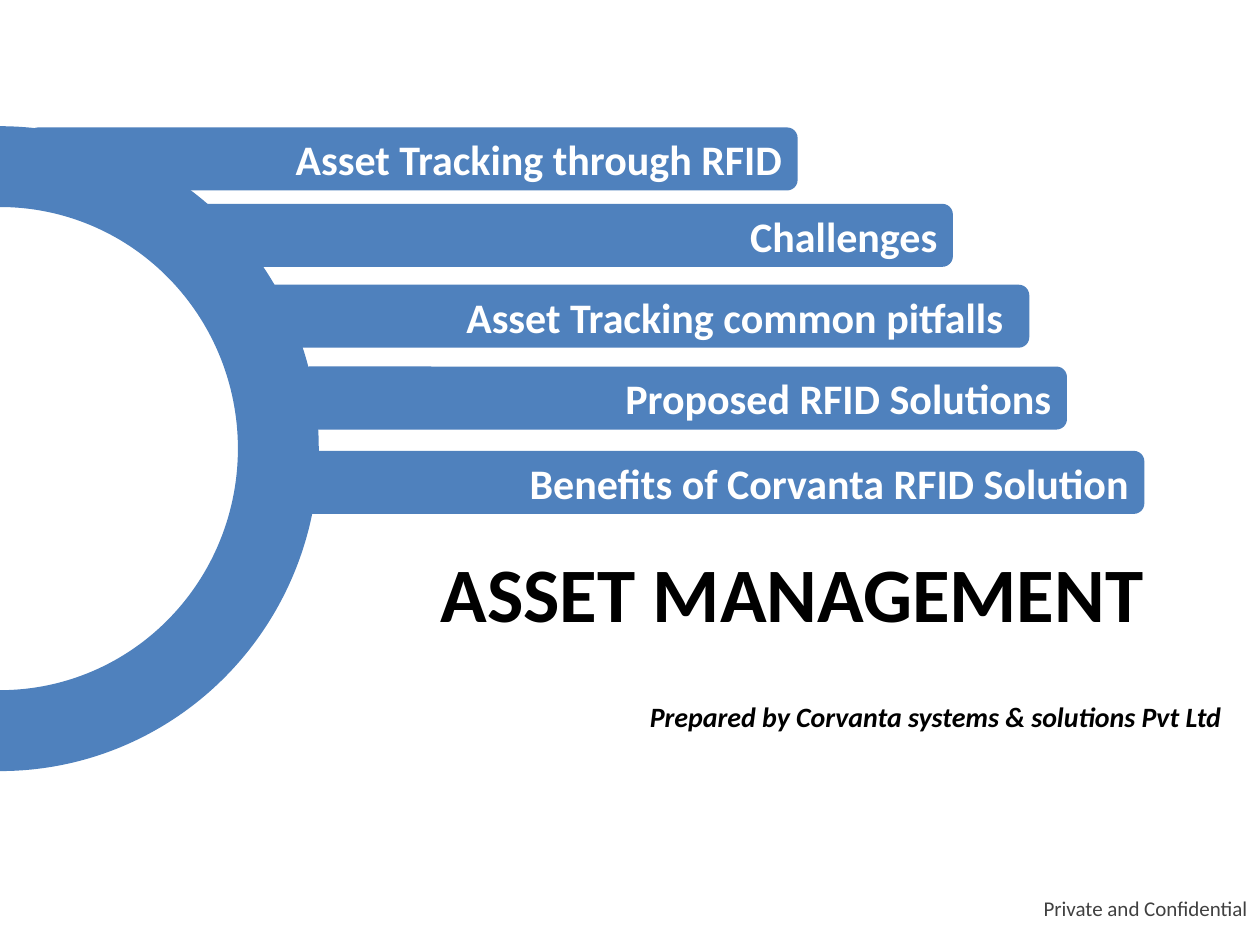
from pptx import Presentation
from pptx.dml.color import RGBColor
from pptx.enum.shapes import MSO_SHAPE
from pptx.enum.text import MSO_ANCHOR, PP_ALIGN
from pptx.util import Cm, Pt

ARC, BAR = MSO_SHAPE.BLOCK_ARC, MSO_SHAPE.ROUNDED_RECTANGLE
TOP, MID = MSO_ANCHOR.TOP, MSO_ANCHOR.MIDDLE
LEFT, MEAN, RIGHT = PP_ALIGN.LEFT, PP_ALIGN.CENTER, PP_ALIGN.RIGHT

HUES = {"blue": "4F81BD", "white": "FFFFFF", "black": "000000", "grey": "404040"}
FONT = "Calibri"
BAR_TALL = 1.27
ARC_TALL = 12.85
RING = 1.63

BARS = [
    ("Asset Tracking through RFID", 0.56, 2.57, 15.52, 0.25),
    ("Challenges", 3.61, 4.11, 15.6, 0.25),
    ("Asset Tracking common pitfalls", 4.95, 5.74, 15.8, 0.46),
    ("Proposed RFID Solutions", 6.02, 7.39, 15.49, 0.25),
    ("Benefits of Corvanta RFID Solution", 5.92, 9.09, 17.15, 0.25),
]


def hue(name):
    return RGBColor.from_string(HUES[name])


def write(shape, text, size=24, color="black", bold=True, slant=False,
          align=LEFT, anchor=MID, inset=0.25):
    frame = shape.text_frame
    frame.word_wrap = True
    frame.vertical_anchor = anchor
    frame.margin_right = Cm(inset)
    para = frame.paragraphs[0]
    para.alignment = align
    run = para.add_run()
    run.text = text
    font = run.font
    font.name, font.size = FONT, Pt(size)
    font.bold, font.italic = bold, slant
    font.color.rgb = hue(color)


def add_form(slide, kind, *box):
    form = slide.shapes.add_shape(kind, *map(Cm, box))
    form.shadow.inherit = False
    form.fill.solid()
    form.fill.fore_color.rgb = hue("blue")
    form.line.fill.background()
    return form


def add_arc(slide):
    arc = add_form(slide, ARC, -6.5, 2.62, 13, ARC_TALL)
    arc.rotation = 90
    for spot, value in enumerate((107.97, 0.24, RING / ARC_TALL)):
        arc.adjustments[spot] = value


def add_bar(slide, text, left, top, width, inset):
    bar = add_form(slide, BAR, left, top, width, BAR_TALL)
    write(bar, text, color="white", align=RIGHT, inset=inset)


def add_text(slide, text, *box, **form):
    write(slide.shapes.add_textbox(*map(Cm, box)), text, **form)


def main():
    deck = Presentation()
    deck.slide_width, deck.slide_height = Cm(25.4), Cm(19.05)
    slide = deck.slides.add_slide(deck.slide_layouts[6])
    add_arc(slide)
    for bar in BARS:
        add_bar(slide, *bar)
    add_text(slide, "ASSET MANAGEMENT", 7.62, 10.52, 16.71, 2.82,
             size=44, align=MEAN)
    add_text(slide, "Prepared by Corvanta systems & solutions Pvt Ltd",
             12.85, 13.97, 12.22, 2.11, size=16, slant=True, anchor=TOP)
    add_text(slide, "Private and Confidential", 17.78, 17.98, 7.62, 0.64,
             size=12, color="grey", bold=False, align=RIGHT)
    deck.save("out.pptx")


if __name__ == "__main__":
    main()
